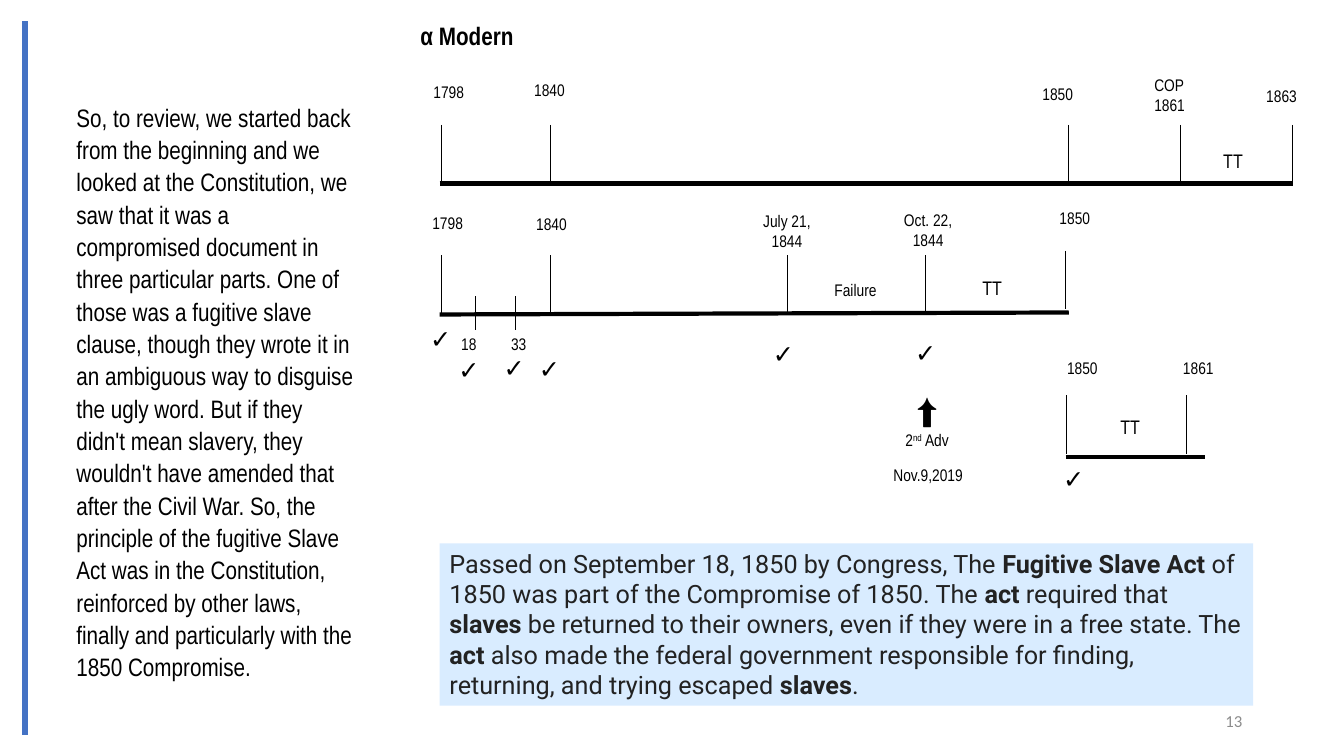
from lxml import etree
from pptx import Presentation
from pptx.dml.color import RGBColor
from pptx.enum.shapes import MSO_CONNECTOR as Connector, MSO_SHAPE as Shape
from pptx.enum.text import MSO_ANCHOR as Anchor, MSO_AUTO_SIZE as AutoSize, PP_ALIGN as Align
from pptx.oxml.ns import qn
from pptx.util import Inches, Pt

BLACK, BLUE, GREY, INK, PALE = "000000", "4472C4", "8C8C8C", "222222", "D9ECFF"


def colour(code):
    return RGBColor.from_string(code)


class Painter:
    """Draws elements on one slide in a shared style."""

    def __init__(self, slide, font="Arial Narrow"):
        self.slide = slide
        self.font = font

    def style(self, span, size, code=BLACK, bold=False, font=None):
        span.font.name = font or self.font
        span.font.size = Pt(size)
        span.font.bold = bold
        span.font.color.rgb = colour(code)

    def frame(self, box, anchor=Anchor.TOP):
        frame = box.text_frame
        frame.word_wrap = True
        frame.auto_size = AutoSize.NONE
        frame.vertical_anchor = anchor
        return frame

    def title(self, text, left, top, width, height):
        box = self.slide.shapes.title
        box.left, box.top = Inches(left), Inches(top)
        box.width, box.height = Inches(width), Inches(height)
        frame = self.frame(box)
        frame.text = text
        para = frame.paragraphs[0]
        para.alignment, para.line_spacing = Align.LEFT, 1.0
        self.style(para.runs[0], 18, bold=True)

    def text(self, text, left, top, width, height, size=12, align=Align.CENTER,
             spacing=1.0, anchor=Anchor.TOP, **look):
        box = self.slide.shapes.add_textbox(
            Inches(left), Inches(top), Inches(width), Inches(height))
        frame = self.frame(box, anchor)
        frame.text = text
        for para in frame.paragraphs:
            para.alignment, para.line_spacing = align, spacing
            for span in para.runs:
                self.style(span, size, **look)
        return frame

    def line(self, x1, y1, x2, y2, weight=0.75, code=BLACK):
        line = self.slide.shapes.add_connector(
            Connector.STRAIGHT, Inches(x1), Inches(y1), Inches(x2), Inches(y2))
        line.line.width = Pt(weight)
        line.line.color.rgb = colour(code)
        etree.SubElement(line._element.spPr, qn("a:effectLst"))

    def ticks(self, top, height, places):
        for x in places:
            self.line(x, top, x, top + height)

    def panel(self, parts, left, top, width, height, fill):
        box = self.slide.shapes.add_shape(
            Shape.RECTANGLE, Inches(left), Inches(top), Inches(width), Inches(height))
        box.shadow.inherit = False
        box.fill.solid()
        box.fill.fore_color.rgb = colour(fill)
        box.line.fill.background()
        para = self.frame(box).paragraphs[0]
        para.alignment = Align.LEFT
        # Every second part is bold
        for index, part in enumerate(parts):
            span = para.add_run()
            span.text = part
            self.style(span, 18, INK, bold=index % 2 == 1, font="Roboto")


def main():
    deck = Presentation()
    deck.slide_width, deck.slide_height = Inches(13.33), Inches(7.5)
    painter = Painter(deck.slides.add_slide(deck.slide_layouts[5]))

    # Title, review text, side bar and slide number
    painter.title("α Modern", 4.07, 0.15, 1.81, 0.4)
    painter.text(
        "So, to review, we started back from the beginning and we looked at the "
        "Constitution, we saw that it was a compromised document in three particular "
        "parts. One of those was a fugitive slave clause, though they wrote it in an "
        "ambiguous way to disguise the ugly word. But if they didn't mean slavery, they "
        "wouldn't have amended that after the Civil War. So, the principle of the "
        "fugitive Slave Act was in the Constitution, reinforced by other laws, finally "
        "and particularly with the 1850 Compromise.",
        0.66, 0.94, 2.96, 5.92, size=18, align=Align.LEFT, spacing=1.07)
    painter.line(0.25, 0.21, 0.25, 7.29, 4.5, BLUE)
    painter.text("13", 9.42, 6.95, 3, 0.4, align=Align.RIGHT, anchor=Anchor.MIDDLE,
                 code=GREY, font="Calibri")

    # Timelines: base line, then tick top, height and places
    timelines = [
        ((4.36, 1.82, 12.82, 1.82), 1.24, 0.58, (4.38, 5.46, 10.6, 11.71, 12.82)),
        ((4.36, 3.12, 10.6, 3.1), 2.53, 0.58, (4.38, 5.46, 7.81, 9.18)),
        ((10.57, 4.53, 11.95, 4.53), 3.92, 0.58, (10.58, 11.77)),
    ]
    for base, top, height, places in timelines:
        painter.line(*base, weight=3)
        painter.ticks(top, height, places)
    painter.ticks(2.49, 0.58, [10.57])
    painter.ticks(2.94, 0.33, (4.72, 5.11))

    # Dates on the first timeline
    for date, left, top, width in [("1798", 4.2, 0.76, 0.67), ("1863", 12.46, 0.8, 0.62),
                                   ("COP\n1861", 11.35, 0.69, 0.64),
                                   ("1850", 10.24, 0.78, 0.64)]:
        painter.text(date, left, top, width, 0.3 + 0.2 * date.count("\n"),
                     align=Align.LEFT)

    # Centred dates and notes
    for label, left, top, width in [
            ("1840", 5.13, 0.74, 0.64), ("1798", 4.16, 2.06, 0.56),
            ("1840", 5.15, 2.07, 0.64), ("July 21,\n1844", 7.4, 2.04, 0.81),
            ("Oct. 22,\n1844", 8.73, 2.03, 0.95), ("1850", 10.34, 2.01, 0.64),
            ("1850", 10.3, 3.5, 0.87), ("1861", 11.55, 3.5, 0.67),
            ("18", 4.38, 3.26, 0.54), ("33", 4.88, 3.26, 0.53),
            ("Failure", 8.08, 2.73, 0.81), ("Nov.9,2019", 8.73, 4.56, 0.95)]:
        painter.text(label, left, top, width, 0.3 + 0.2 * label.count("\n"))

    # Tarrying times and check marks
    for left, top in [(11.91, 1.43), (9.52, 2.69), (10.89, 4.07)]:
        painter.text("TT", left, top, 0.64, 0.34, size=14)
    for left, top in [(4.16, 3.16), (4.44, 3.47), (4.89, 3.45), (5.24, 3.46),
                      (7.56, 3.31), (8.97, 3.3), (10.44, 4.55)]:
        painter.text("✓", left, top, 0.42, 0.4, size=18, bold=True)

    # Arrow with the second advent note
    arrow, advent = painter.text("⬆\n2", 8.79, 3.81, 0.81, 0.71).paragraphs
    arrow.runs[0].font.size = Pt(24)
    for part, baseline in (("nd", "30000"), (" Adv", "0")):
        span = advent.add_run()
        span.text = part
        painter.style(span, 12)
        span._r.get_or_add_rPr().set("baseline", baseline)

    # Fugitive Slave Act panel
    painter.panel(
        ["Passed on September 18, 1850 by Congress, The ", "Fugitive Slave Act",
         " of 1850 was part of the Compromise of 1850. The ", "act",
         " required that ", "slaves",
         " be returned to their owners, even if they were in a free state. The ", "act",
         " also made the federal government responsible for finding, returning, "
         "and trying escaped ", "slaves", "."],
        4.36, 5.39, 8.07, 1.61, PALE)

    deck.save("out.pptx")


if __name__ == "__main__":
    main()
